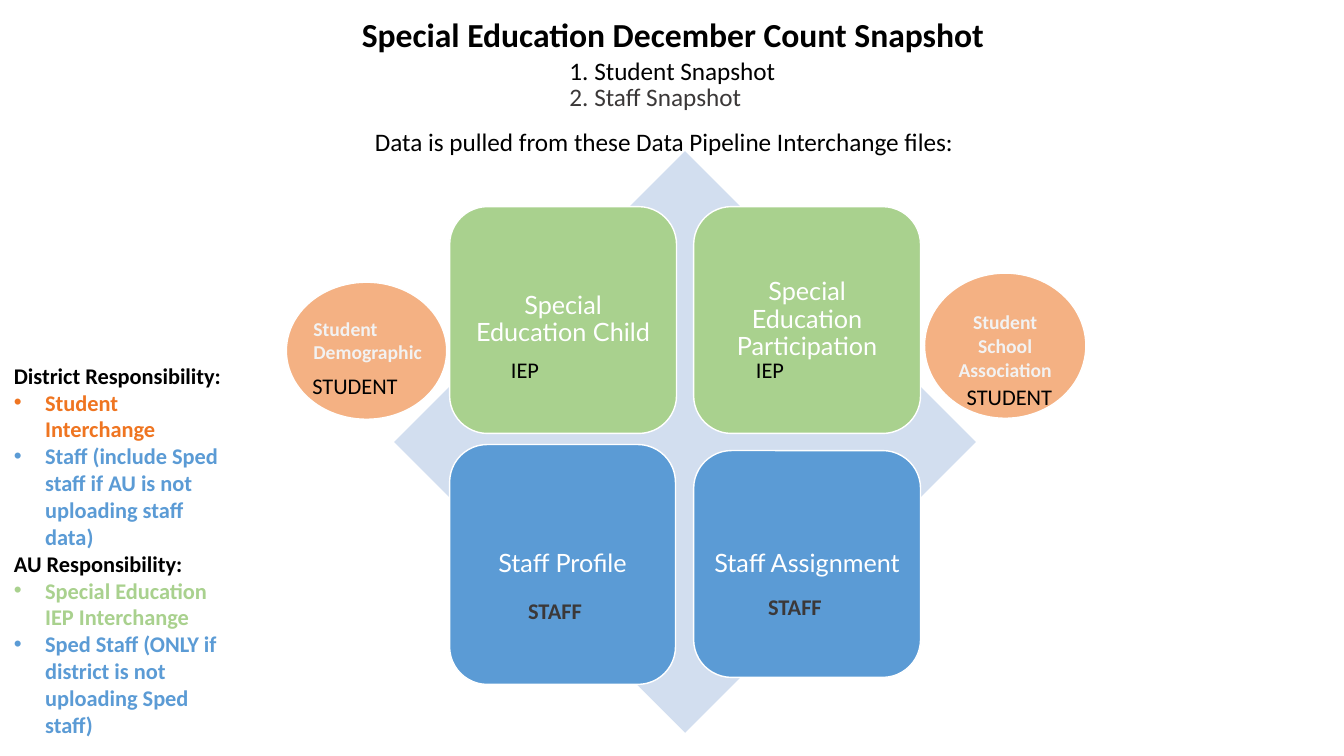
from lxml import etree
from pptx import Presentation
from pptx.dml.color import RGBColor
from pptx.enum import shapes as sh, text as tx
from pptx.oxml.ns import qn
from pptx.util import Inches, Pt

BLACK, GRAY, WHITE, PALE = "000000", "3B3838", "FFFFFF", "F2F2F2"
GREEN, BLUE, PEACH, ORANGE = "A9D18E", "5B9BD5", "F4B183", "EF7521"

CARDS = [
    ("Special Education Child", GREEN, 4.46, 2.05, 2.25, 2.25),
    ("Special Education Participation", GREEN, 6.88, 2.05, 2.25, 2.25),
    ("Staff Profile", BLUE, 4.46, 4.41, 2.24, 2.38),
    ("Staff Assignment", BLUE, 6.88, 4.47, 2.25, 2.25),
]
HEADS = [
    ("1. Student Snapshot", 5.55, 0.5, 2.4, BLACK),
    ("2. Staff Snapshot", 5.55, 0.76, 2, GRAY),
    ("Data is pulled from these Data Pipeline Interchange files:",
     3.62, 1.2, 7.72, BLACK),
]
TAGS = [
    ("STUDENT", 3, 3.64, BLACK, False),
    ("STUDENT", 9.49, 3.75, BLACK, False),
    ("IEP", 4.97, 3.48, BLACK, False),
    ("IEP", 7.4, 3.48, BLACK, False),
    ("STAFF", 5.14, 5.87, GRAY, True),
    ("STAFF", 7.52, 5.84, GRAY, True),
]
DUTIES = [
    ("District Responsibility:", BLACK, False),
    ("Student Interchange", ORANGE, True),
    ("Staff (include Sped staff if AU is not uploading staff data)", BLUE, True),
    ("AU Responsibility:", BLACK, False),
    ("Special Education IEP Interchange", GREEN, True),
    ("Sped Staff (ONLY if district is not uploading Sped staff)", BLUE, True),
]


def rgb(code):
    return RGBColor.from_string(code)


def style(par, size, color, bold=False, face="Calibri", center=False):
    par.alignment = tx.PP_ALIGN.CENTER if center else tx.PP_ALIGN.LEFT
    for run in par.runs:
        font = run.font
        font.name, font.size, font.bold = face, Pt(size), bold
        font.color.rgb = rgb(color)


def add_box(slide, left, top, width, height):
    box = slide.shapes.add_textbox(
        Inches(left), Inches(top), Inches(width), Inches(height))
    box.text_frame.word_wrap = True
    return box.text_frame


def add_label(slide, words, left, top, width, height, *look, **more):
    par = add_box(slide, left, top, width, height).paragraphs[0]
    par.text = words
    style(par, *look, **more)


def add_form(slide, kind, left, top, width, height, fill, line=WHITE):
    form = slide.shapes.add_shape(
        kind, Inches(left), Inches(top), Inches(width), Inches(height))
    form.shadow.inherit = False
    form.fill.solid()
    form.fill.fore_color.rgb = rgb(fill)
    if line:
        form.line.color.rgb = rgb(line)
        form.line.width = Pt(1)
    else:
        form.line.fill.background()
    return form


def add_card(slide, words, fill, *place):
    card = add_form(slide, sh.MSO_SHAPE.ROUNDED_RECTANGLE, *place, fill)
    frame = card.text_frame
    frame.word_wrap = True
    frame.vertical_anchor = tx.MSO_ANCHOR.MIDDLE
    frame.margin_left = frame.margin_right = Inches(0.07)
    frame.margin_top = frame.margin_bottom = Inches(0.07)
    par = frame.paragraphs[0]
    par.text = words
    par.line_spacing = 0.9
    style(par, 18, WHITE, face="Lato", center=True)


def add_bullet(par):
    props = par._p.get_or_add_pPr()
    props.set("marL", str(Inches(0.31)))
    props.set("indent", str(-Inches(0.31)))
    etree.SubElement(props, qn("a:buFont")).set("typeface", "Arial")
    etree.SubElement(props, qn("a:buChar")).set("char", "•")


def add_duties(slide):
    frame = add_box(slide, 0.04, 3.54, 2.27, 3.87)
    frame.text = "\n".join(words for words, _, _ in DUTIES)
    for par, (_, color, dot) in zip(frame.paragraphs, DUTIES):
        if dot:
            add_bullet(par)
        style(par, 16, color, bold=True)


def main():
    deck = Presentation()
    deck.slide_width, deck.slide_height = Inches(13.33), Inches(7.5)
    slide = deck.slides.add_slide(deck.slide_layouts[6])

    add_label(slide, "Special Education December Count Snapshot",
              1.62, 0.09, 10.11, 0.5, 24, BLACK, bold=True, center=True)
    for words, left, top, width, color in HEADS:
        add_label(slide, words, left, top, width, 0.4, 18, color)

    add_form(slide, sh.MSO_SHAPE.DIAMOND, 3.91, 1.5, 5.77, 5.77, "D2DEEF", None)
    for card in CARDS:
        add_card(slide, *card)

    add_form(slide, sh.MSO_SHAPE.OVAL, 2.84, 2.8, 1.59, 1.36, PEACH)
    add_label(slide, "Student Demographic", 3.01, 3.09, 1.64, 0.57,
              14, PALE, bold=True)
    school = add_form(slide, sh.MSO_SHAPE.OVAL, 9.17, 2.71, 1.6, 1.44, PEACH)
    school.text_frame.text = "Student School Association"
    school.text_frame.word_wrap = True
    school.text_frame.vertical_anchor = tx.MSO_ANCHOR.MIDDLE
    style(school.text_frame.paragraphs[0], 14, PALE, bold=True, center=True)

    for words, left, top, color, bold in TAGS:
        add_label(slide, words, left, top, 1.1, 0.37, 16, color, bold)
    add_duties(slide)
    deck.save("out.pptx")


if __name__ == "__main__":
    main()
